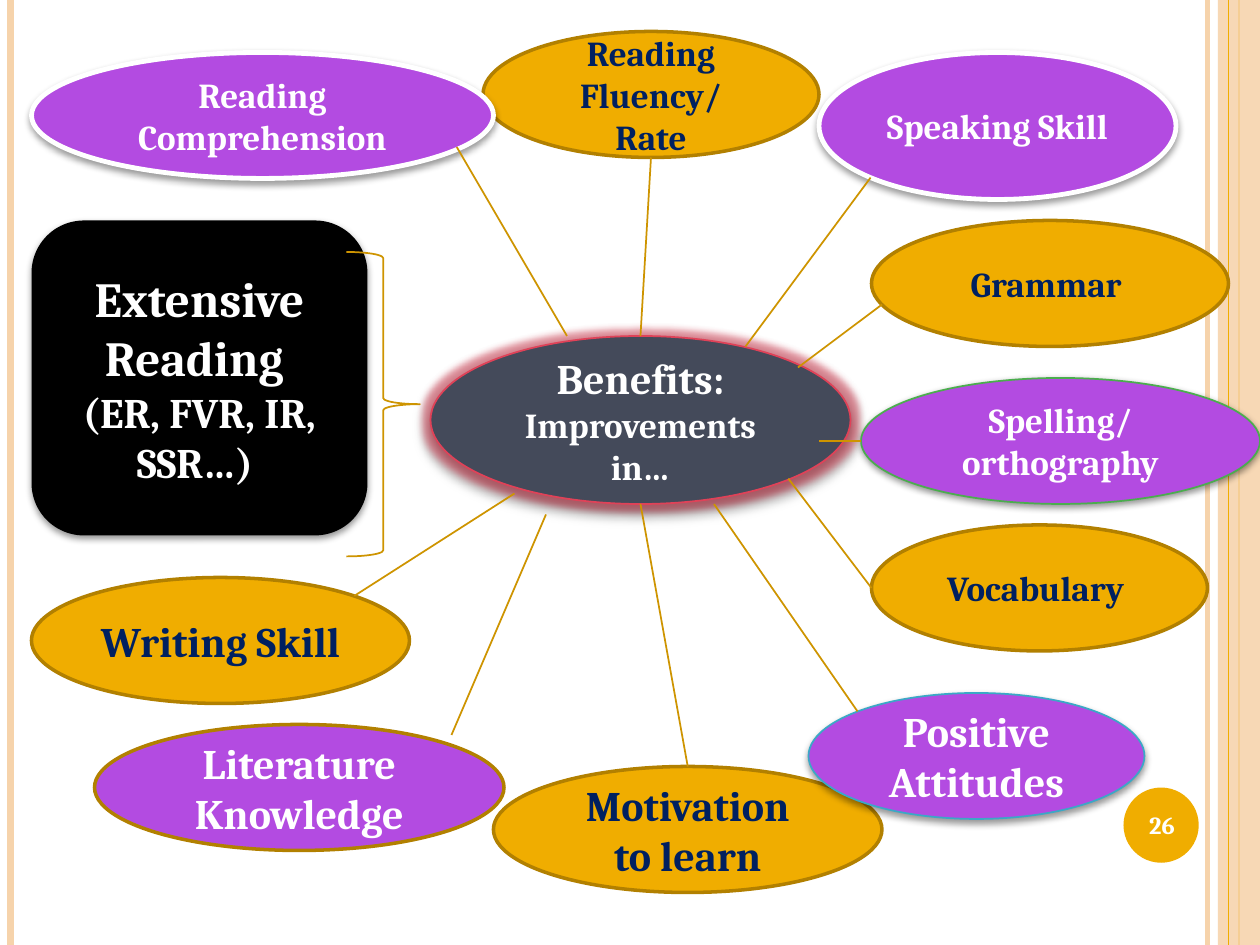
from lxml.etree import SubElement
from pptx import Presentation
from pptx.dml.color import RGBColor
from pptx.enum.shapes import MSO_CONNECTOR, MSO_SHAPE
from pptx.enum.text import MSO_ANCHOR, PP_ALIGN
from pptx.oxml.ns import qn
from pptx.util import Pt

WHITE = RGBColor(0xFF, 0xFF, 0xFF)
BLACK = RGBColor(0x00, 0x00, 0x00)
NAVY = RGBColor(0x00, 0x20, 0x60)
AMBER = RGBColor(0xF0, 0xAD, 0x00)
BRONZE = RGBColor(0xB2, 0x80, 0x00)
GOLD = RGBColor(0xCE, 0x94, 0x00)
PEACH = RGBColor(0xF6, 0xD3, 0xAB)
PURPLE = RGBColor(0xB3, 0x4B, 0xE1)
SLATE = RGBColor(0x44, 0x4A, 0x5A)
ROSE = RGBColor(0xDF, 0x42, 0x58)
TEAL = RGBColor(0x3B, 0xA8, 0xC6)
GREEN = RGBColor(0x4B, 0xAD, 0x4E)

SOFT_SHADOW = (40, 4, 2)
LOW_SHADOW = (42, 4, 1.6)
DEEP_SHADOW = (54, 4, 3)

AMBER_STYLE = dict(fill=AMBER, line=BRONZE, weight=2)
RAISED_STYLE = dict(fill=PURPLE, line=WHITE, weight=2.75, shadow=SOFT_SHADOW)

BUBBLES = [
    ("Reading Fluency/ Rate", (276, 18, 192, 72), 20, NAVY, AMBER_STYLE),
    ("Speaking Skill", (468, 30, 204, 84), 20, WHITE, RAISED_STYLE),
    ("Grammar ", (498, 126, 204, 72), 20, NAVY, AMBER_STYLE),
    ("Vocabulary ", (498, 300, 192, 72), 20, NAVY, AMBER_STYLE),
    ("Motivation to learn", (282, 438, 222, 72), 24, NAVY, AMBER_STYLE),
    ("Positive Attitudes", (462, 396, 192, 72), 24, WHITE,
     dict(fill=PURPLE, line=TEAL, shadow=SOFT_SHADOW)),
    ("Spelling/ orthography", (492, 216, 228, 72), 20, WHITE,
     dict(fill=PURPLE, line=GREEN, shadow=LOW_SHADOW)),
    ("Reading Comprehension", (18, 30, 264, 72), 20, WHITE, RAISED_STYLE),
    ("Literature Knowledge", (54, 414, 234, 72), 24, WHITE,
     dict(fill=PURPLE, line=BRONZE, weight=2)),
    ("Writing Skill", (18, 330, 216, 72), 24, NAVY, AMBER_STYLE),
]

SPOKES = [
    ((366, 192), (372, 90)),
    ((426, 198), (497.5, 101.5)),
    ((456, 210), (504, 174)),
    ((468, 252), (492, 252)),
    ((450.5, 273.5), (498, 336)),
    ((408, 288), (490, 406.5)),
    ((366, 288), (393, 438)),
    ((324, 192), (261, 84)),
    ((312, 294), (258, 420)),
    ((294, 282), (202.5, 340.5)),
]


def add_alpha(parent, percent):
    SubElement(parent, qn("a:alpha"), val=str(percent * 1000))


def add_effects(shape, shadow=None, glow=None):
    effects = shape._element.spPr.find(qn("a:effectLst"))
    if glow:
        color, radius, opacity = glow
        halo = SubElement(effects, qn("a:glow"), rad=str(Pt(radius)))
        add_alpha(SubElement(halo, qn("a:srgbClr"), val=str(color)), opacity)
    if shadow:
        opacity, blur, distance = shadow
        cast = SubElement(effects, qn("a:outerShdw"), blurRad=str(Pt(blur)),
                          dist=str(Pt(distance)), dir="5400000", rotWithShape="0")
        add_alpha(SubElement(cast, qn("a:srgbClr"), val=str(BLACK)), opacity)


def add_figure(slide, kind, box, fill=None, line=None, weight=1, shadow=None, glow=None):
    shape = slide.shapes.add_shape(kind, *[Pt(value) for value in box])
    shape.shadow.inherit = False
    if fill is None:
        shape.fill.background()
    else:
        shape.fill.solid()
        shape.fill.fore_color.rgb = fill
    if line is None:
        shape.line.fill.background()
    else:
        shape.line.color.rgb = line
        shape.line.width = Pt(weight)
    add_effects(shape, shadow, glow)
    return shape


def add_line(slide, start, end, color=GOLD, weight=1):
    ends = [Pt(value) for value in (*start, *end)]
    line = slide.shapes.add_connector(MSO_CONNECTOR.STRAIGHT, *ends)
    line.line.color.rgb = color
    line.line.width = Pt(weight)
    SubElement(line._element.spPr, qn("a:effectLst"))


def add_span(para, text, size=20, color=WHITE, bold=True, font="Cambria"):
    span = para.add_run()
    span.text = text
    span.font.name = font
    span.font.size = Pt(size)
    span.font.bold = bold
    span.font.color.rgb = color


def write_paragraphs(shape, *paragraphs):
    frame = shape.text_frame
    frame.word_wrap = True
    frame.vertical_anchor = MSO_ANCHOR.MIDDLE
    for index, spans in enumerate(paragraphs):
        para = frame.add_paragraph() if index else frame.paragraphs[0]
        para.alignment = PP_ALIGN.CENTER
        for text, style in spans:
            add_span(para, text, **style)


def draw_side_stripes(slide, box):
    left, top, width, height = box
    right, bottom = left + width, top + height
    add_line(slide, (right - 30, top), (right - 30, bottom), PEACH, 3)
    add_line(slide, (left + 6, top), (left + 6, bottom), PEACH, 4.5)
    add_line(slide, (right - 12, top), (right - 12, bottom), AMBER, 1.5)
    band = add_figure(slide, MSO_SHAPE.RECTANGLE, (right - 24, top, 24, height), fill=PEACH)
    add_alpha(band._element.spPr.find(qn("a:solidFill"))[0], 87)
    add_line(slide, (right - 18, top), (right - 18, bottom), AMBER, 0.75)


def draw_reading_panel(slide, box):
    left, top, width, height = box
    panel = add_figure(slide, MSO_SHAPE.ROUNDED_RECTANGLE, (left, top, width - 30, height - 12),
                       fill=BLACK, shadow=LOW_SHADOW)
    write_paragraphs(panel, [("Extensive Reading ", dict(size=28))],
                     [("(ER, FVR, IR, SSR…) ", dict(size=24))])
    add_figure(slide, MSO_SHAPE.RIGHT_BRACE, (left + width - 42, top + 18, 42, height - 18),
               line=GOLD)


def draw_benefits_map(slide, box):
    left, top = box[:2]
    hub = add_figure(slide, MSO_SHAPE.OVAL, (left + 246, top + 192, 240, 96), fill=SLATE,
                     line=ROSE, shadow=DEEP_SHADOW, glow=(ROSE, 8, 50))
    write_paragraphs(hub, [("Benefits:", dict(size=24)), (" Improvements in…", dict(size=20))])
    for text, (x, y, width, height), size, color, style in BUBBLES:
        bubble = add_figure(slide, MSO_SHAPE.OVAL, (left + x, top + y, width, height), **style)
        write_paragraphs(bubble, [(text, dict(size=size, color=color))])
    for start, end in SPOKES:
        add_line(slide, *[(left + x, top + y) for x, y in (start, end)])


def draw_page_badge(slide, box):
    left, top, width, height = box
    add_figure(slide, MSO_SHAPE.OVAL, box, fill=AMBER)
    label = slide.shapes.add_textbox(Pt(left - 2), Pt(top + 1), Pt(width + 5), Pt(height - 2))
    write_paragraphs(label, [("26", dict(size=14))])


def main():
    deck = Presentation()
    deck.slide_width, deck.slide_height = Pt(720), Pt(540)
    slide = deck.slides.add_slide(deck.slide_layouts[6])
    page = (0, 0, 720, 540)
    draw_side_stripes(slide, page)
    draw_reading_panel(slide, (18, 126, 222, 192))
    draw_benefits_map(slide, page)
    draw_page_badge(slide, (642, 450, 43, 43))
    deck.save("out.pptx")


if __name__ == "__main__":
    main()
